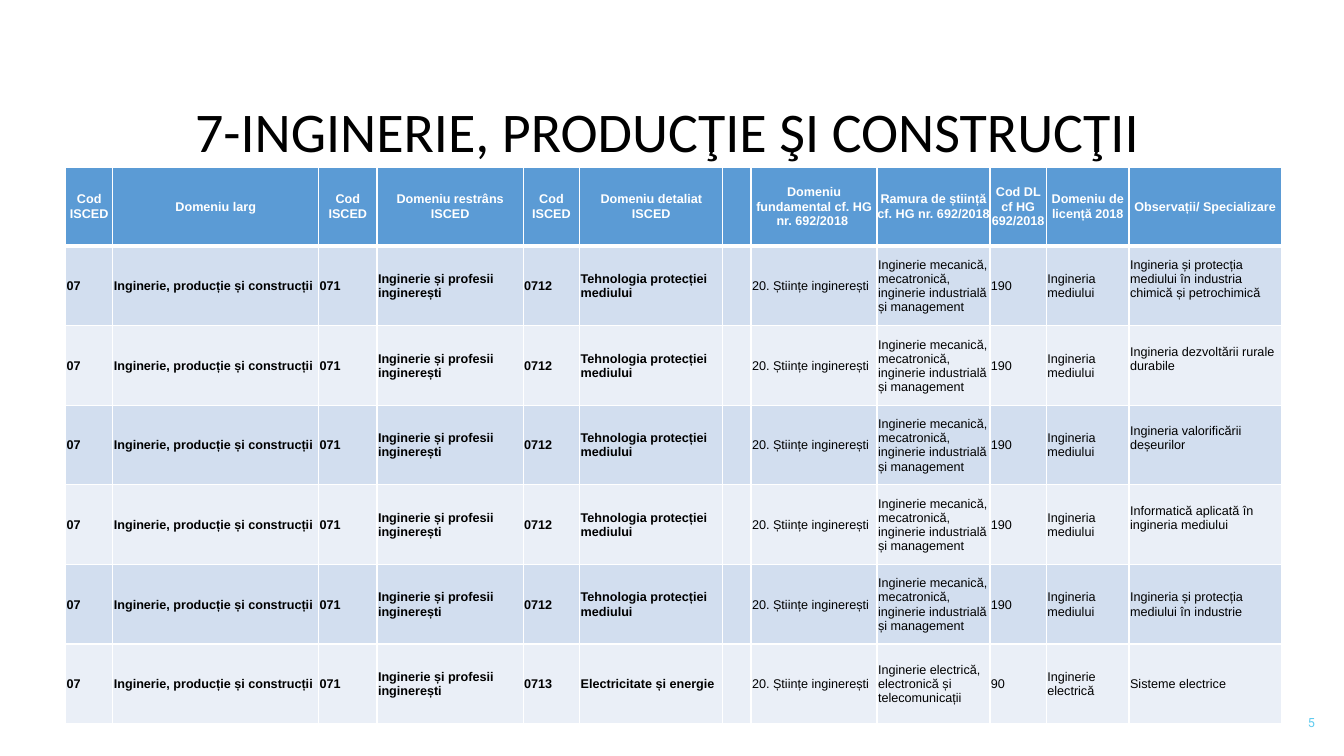
from dataclasses import dataclass

from lxml.etree import SubElement
from pptx import Presentation
from pptx.dml.color import RGBColor
from pptx.enum.text import MSO_ANCHOR, PP_ALIGN
from pptx.oxml.ns import qn
from pptx.util import Inches, Pt


@dataclass(frozen=True)
class Theme:
    """Colours, fonts and type sizes of the slide."""
    ink: str = "000000"
    white: str = "FFFFFF"
    header: str = "5B9BD5"
    bands: tuple = ("D2DEEF", "EAEFF7")
    accent: str = "5FCBEF"
    title_font: str = "Calibri"
    table_font: str = "Arial"
    number_font: str = "Roboto"
    title_size: int = 40
    small_size: int = 9


class SlideBuilder:
    """Draws styled elements on the current slide."""

    def __init__(self, slide, theme):
        self.slide = slide
        self.theme = theme

    def style(self, paragraph, font, size, color, align, bold=False):
        """Set the alignment and font of a paragraph."""
        paragraph.alignment = align
        paragraph.font.name = font
        paragraph.font.size = Pt(size)
        paragraph.font.bold = bold
        paragraph.font.color.rgb = RGBColor.from_string(color)

    def text(self, words, box, font, size, color, align, line_spacing=1.0):
        """Add a vertically centred line of text."""
        frame = self.slide.shapes.add_textbox(*map(Inches, box)).text_frame
        frame.word_wrap = True
        frame.vertical_anchor = MSO_ANCHOR.MIDDLE
        paragraph = frame.paragraphs[0]
        paragraph.text = words
        paragraph.line_spacing = line_spacing
        self.style(paragraph, font, size, color, align)

    def border(self, cell, side, width):
        """Draw one white border of a cell."""
        line = SubElement(cell._tc.get_or_add_tcPr(), qn(f"a:ln{side}"), w=str(Pt(width)))
        SubElement(SubElement(line, qn("a:solidFill")), qn("a:srgbClr"), val=self.theme.white)

    def cell(self, cell, words, row, column):
        """Fill and style one cell by its place in the table."""
        theme = self.theme
        is_header = row == 0
        widths = {"L": 1, "R": 1, "T": 3 if row == 1 else 1, "B": 3 if is_header else 1}
        for side, width in widths.items():
            self.border(cell, side, width)
        cell.fill.solid()
        fill = theme.header if is_header else theme.bands[(row - 1) % 2]
        cell.fill.fore_color.rgb = RGBColor.from_string(fill)
        cell.vertical_anchor = MSO_ANCHOR.MIDDLE
        inset = Inches(0 if is_header else 0.01)
        cell.margin_left = cell.margin_right = cell.margin_top = inset
        raised = column == SPECIALIZATION_COLUMN and row in RAISED_ROWS
        cell.margin_bottom = Inches(0.14 if raised else 0)
        paragraph = cell.text_frame.paragraphs[0]
        paragraph.text = words
        align = PP_ALIGN.LEFT
        if is_header:
            align = PP_ALIGN.CENTER
        elif column == NARROW_CODE_COLUMN:
            align = PP_ALIGN.JUSTIFY
        self.style(paragraph, theme.table_font, theme.small_size,
                   theme.white if is_header else theme.ink, align,
                   bold=is_header or column < FIRST_PLAIN_COLUMN)

    def table(self, rows, box, column_widths, row_heights):
        """Add a banded table with a header row."""
        table = self.slide.shapes.add_table(
            len(rows), len(column_widths), *map(Inches, box)).table
        for column, width in zip(table.columns, column_widths):
            column.width = Inches(width)
        for row, height in zip(table.rows, row_heights):
            row.height = Inches(height)
        for r, row in enumerate(rows):
            for c, words in enumerate(row):
                self.cell(table.cell(r, c), words, r, c)


NARROW_CODE_COLUMN = 2
FIRST_PLAIN_COLUMN = 7
SPECIALIZATION_COLUMN = 11
RAISED_ROWS = range(1, 5)
COLUMN_WIDTHS = (0.47, 2.04, 0.58, 1.45, 0.56, 1.42, 0.28, 1.25, 1.12, 0.56, 0.82, 1.51)
HEADINGS = (
    "Cod ISCED", "Domeniu larg", "Cod ISCED", "Domeniu restrâns ISCED", "Cod ISCED",
    "Domeniu detaliat ISCED", "", "Domeniu fundamental cf. HG nr. 692/2018 ",
    "Ramura de știință cf. HG nr. 692/2018", "Cod DL cf HG 692/2018",
    "Domeniu de licență 2018", "Observații/ Specializare",
)
BROAD_FIELD = ("07", "Inginerie, producție și construcții", "071 ",
               "Inginerie și profesii inginerești")
FUNDAMENTAL_FIELD = ("", "20. Științe inginerești")
ENVIRONMENT = (
    ("0712", "Tehnologia protecției mediului"),
    ("Inginerie mecanică, mecatronică, inginerie industrială și management",
     "190", "Ingineria mediului"),
)
ELECTRICITY = (
    ("0713", "Electricitate și energie"),
    ("Inginerie electrică, electronică și telecomunicații", "90", "Inginerie electrică"),
)
SPECIALIZATIONS = (
    (ENVIRONMENT, "Ingineria și protecția mediului în industria chimică și petrochimică"),
    (ENVIRONMENT, "Ingineria dezvoltării rurale durabile"),
    (ENVIRONMENT, "Ingineria valorificării deșeurilor"),
    (ENVIRONMENT, "Informatică aplicată în ingineria mediului"),
    (ENVIRONMENT, "Ingineria și protecția mediului în industrie"),
    (ELECTRICITY, "Sisteme electrice"),
)


def main():
    """Build the slide and save it."""
    presentation = Presentation()
    presentation.slide_width = Inches(13.33)
    presentation.slide_height = Inches(7.5)
    theme = Theme()
    builder = SlideBuilder(presentation.slides.add_slide(presentation.slide_layouts[6]), theme)

    builder.text("7-INGINERIE, PRODUCŢIE ŞI CONSTRUCŢII ", (0.93, 0.97, 11.5, 0.72),
                 theme.title_font, theme.title_size, theme.ink, PP_ALIGN.CENTER, 0.9)
    programmes = [BROAD_FIELD + detailed + FUNDAMENTAL_FIELD + licence + (specialization,)
                  for (detailed, licence), specialization in SPECIALIZATIONS]
    builder.table([HEADINGS, *programmes], (0.65, 1.66, 12.07, 5.5), COLUMN_WIDTHS,
                  [0.78] + [0.79] * len(programmes))
    builder.text("5", (10.14, 6.97, 3, 0.4), theme.number_font, theme.small_size,
                 theme.accent, PP_ALIGN.RIGHT)

    presentation.save("out.pptx")


if __name__ == "__main__":
    main()
